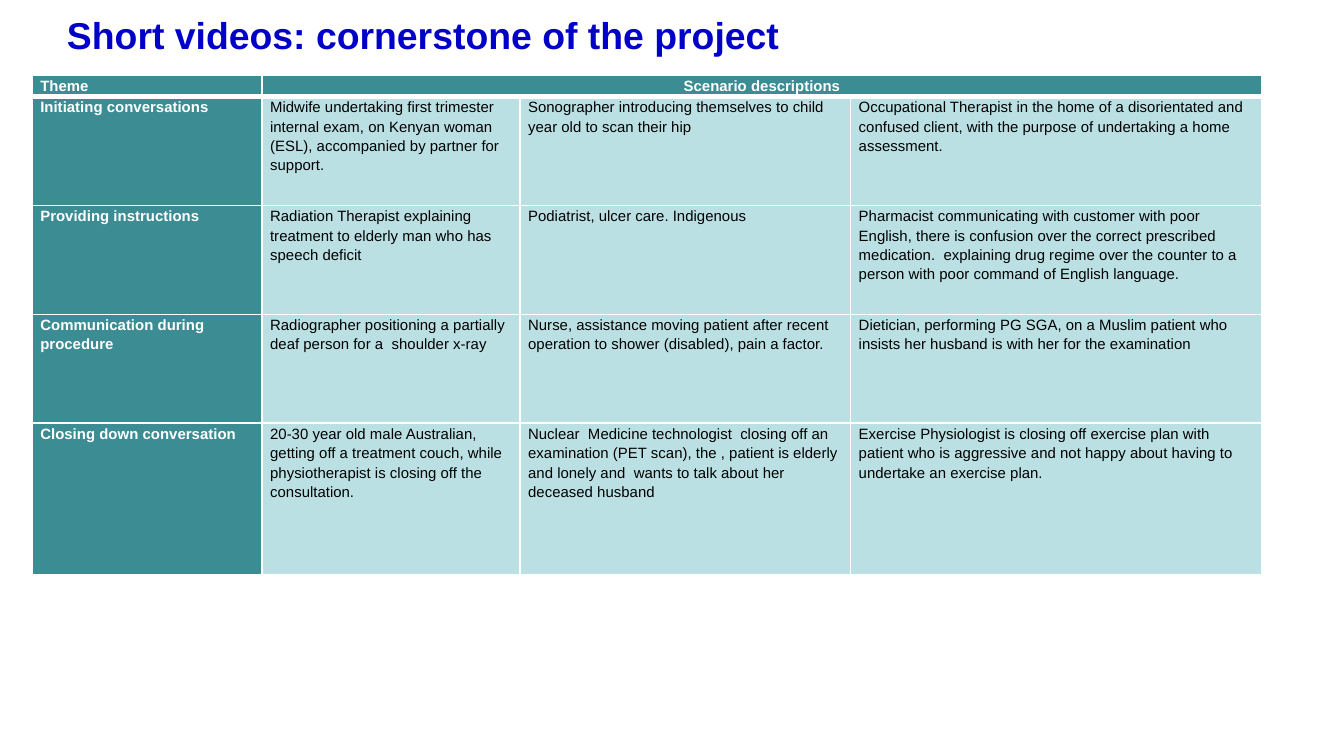
from lxml.etree import SubElement
from pptx import Presentation
from pptx.dml.color import RGBColor
from pptx.enum.text import PP_ALIGN as Align
from pptx.oxml.ns import qn
from pptx.util import Inches, Pt

COLUMN_WIDTHS = [1.71, 1.92, 2.46, 3.06]
ROW_HEIGHTS = [0.16, 0.81, 0.81, 0.81, 1.13]
HEADINGS = ["Theme", "Scenario descriptions"]
SCENARIOS = [
    ["Initiating conversations",
     "Midwife undertaking first trimester internal exam, on Kenyan woman (ESL), "
     "accompanied by partner for support.",
     "Sonographer introducing themselves to child year old to scan their hip",
     "Occupational Therapist in the home of a disorientated and confused client, "
     "with the purpose of undertaking a home assessment."],
    ["Providing instructions",
     "Radiation Therapist explaining treatment to elderly man who has speech deficit",
     "Podiatrist, ulcer care. Indigenous",
     "Pharmacist communicating with customer with poor English, there is confusion "
     "over the correct prescribed medication.  explaining drug regime over the "
     "counter to a person with poor command of English language."],
    ["Communication during procedure",
     "Radiographer positioning a partially deaf person for a  shoulder x-ray",
     "Nurse, assistance moving patient after recent operation to shower (disabled), "
     "pain a factor.",
     "Dietician, performing PG SGA, on a Muslim patient who insists her husband is "
     "with her for the examination"],
    ["Closing down conversation",
     "20-30 year old male Australian, getting off a treatment couch, while "
     "physiotherapist is closing off the consultation.",
     "Nuclear  Medicine technologist  closing off an examination (PET scan), the , "
     "patient is elderly and lonely and  wants to talk about her deceased husband",
     "Exercise Physiologist is closing off exercise plan with patient who is "
     "aggressive and not happy about having to undertake an exercise plan."],
]


def rgb(value):
    return RGBColor.from_string(value)


def write(frame, text, size=8, color="000000", bold=False, align=Align.LEFT, spacing=1.15):
    paragraph = frame.paragraphs[0]
    paragraph.alignment = align
    paragraph.line_spacing = spacing
    run = paragraph.add_run()
    run.text = text
    run.font.name = "Arial"
    run.font.size = Pt(size)
    run.font.bold = bold
    run.font.color.rgb = rgb(color)


class SlideBuilder:
    TITLE, TEAL, PALE, WHITE, BLACK = "0000C8", "3C8C93", "BBE0E3", "FFFFFF", "000000"

    def __init__(self, slide):
        self.slide = slide

    def title(self, text, left, top, width, height):
        box = self.slide.shapes.add_textbox(
            Inches(left), Inches(top), Inches(width), Inches(height))
        box.text_frame.word_wrap = True
        write(box.text_frame, text, size=20, color=self.TITLE, bold=True, spacing=0.9)

    def borders(self, cell, bottom):
        properties = cell._tc.get_or_add_tcPr()
        for side, width in zip("LRTB", (1, 1, 1, bottom)):
            line = SubElement(properties, qn(f"a:ln{side}"), w=str(Pt(width)))
            fill = SubElement(line, qn("a:solidFill"))
            SubElement(fill, qn("a:srgbClr"), val=self.WHITE)

    def style_cell(self, cell, fill, bottom=1):
        cell.margin_left = cell.margin_right = Inches(0.06)
        cell.margin_top = cell.margin_bottom = 0
        self.borders(cell, bottom)
        cell.fill.solid()
        cell.fill.fore_color.rgb = rgb(fill)

    def table(self, headings, rows, left, top, widths, heights):
        table = self.slide.shapes.add_table(
            len(heights), len(widths), Inches(left), Inches(top),
            Inches(sum(widths)), Inches(sum(heights))).table
        for column, width in zip(table.columns, widths):
            column.width = Inches(width)
        for row, height in zip(table.rows, heights):
            row.height = Inches(height)

        # Header row, with one heading across the scenario columns
        table.cell(0, 1).merge(table.cell(0, len(widths) - 1))
        for c in range(len(widths)):
            self.style_cell(table.cell(0, c), self.TEAL, bottom=3)
        for c, (heading, align) in enumerate(zip(headings, (Align.LEFT, Align.CENTER))):
            write(table.cell(0, c).text_frame, heading,
                  color=self.WHITE, bold=True, align=align)

        # Themes in the first column, scenarios in the others
        for r, row in enumerate(rows, 1):
            for c, text in enumerate(row):
                cell, is_theme = table.cell(r, c), c == 0
                self.style_cell(cell, self.TEAL if is_theme else self.PALE)
                write(cell.text_frame, text, bold=is_theme,
                      color=self.WHITE if is_theme else self.BLACK)


def main():
    deck = Presentation()
    # Widescreen, 16:9
    deck.slide_width = Inches(10)
    deck.slide_height = deck.slide_width * 9 // 16
    builder = SlideBuilder(deck.slides.add_slide(deck.slide_layouts[6]))
    builder.title("Short videos: cornerstone of the project", 0.4, 0.08, 8.99, 0.71)
    builder.table(HEADINGS, SCENARIOS, 0.24, 0.56, COLUMN_WIDTHS, ROW_HEIGHTS)
    deck.save("out.pptx")


if __name__ == "__main__":
    main()
